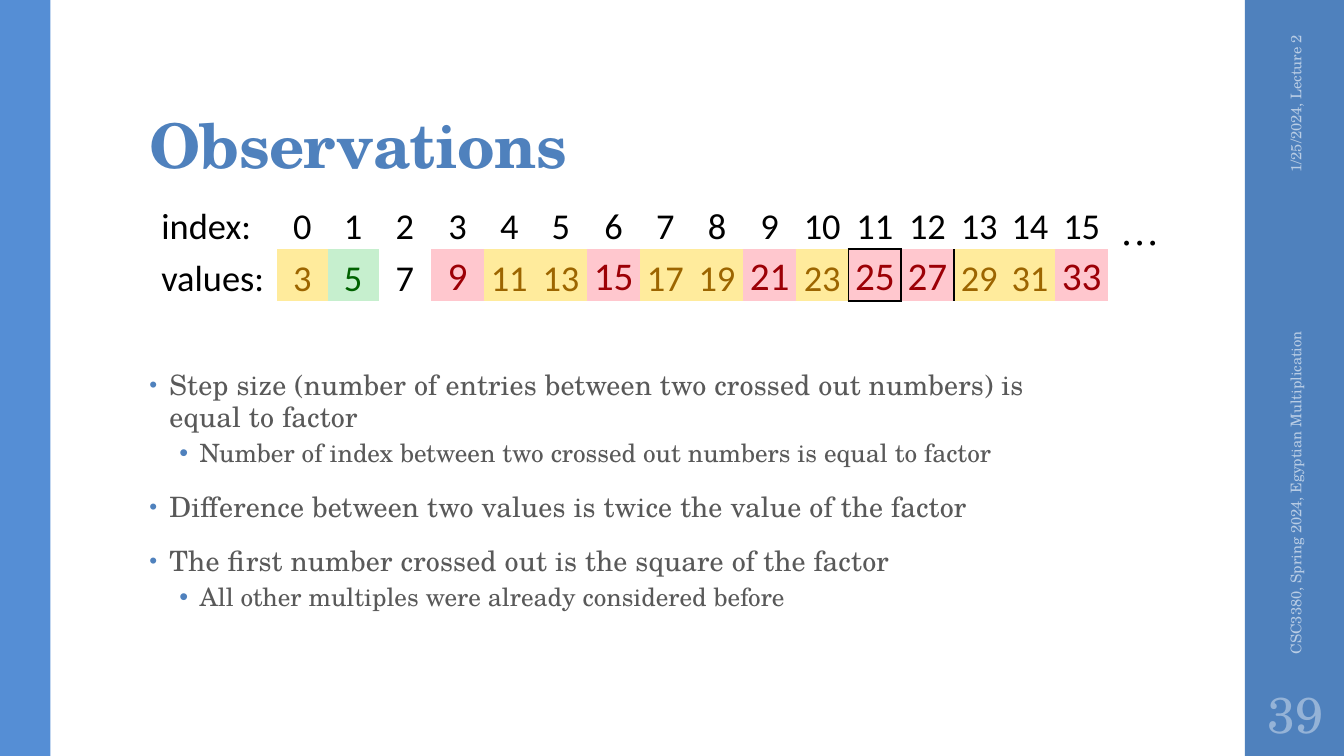
from lxml import etree
from pptx import Presentation
from pptx.dml.color import RGBColor
from pptx.enum import shapes, text
from pptx.oxml import ns
from pptx.util import Pt

BLUE = RGBColor(0x4F, 0x81, 0xBD)
LIGHT_BLUE = RGBColor(0x55, 0x8E, 0xD5)
PALE_BLUE = RGBColor(0xB9, 0xCD, 0xE5)
NUMBER_BLUE = RGBColor(0x95, 0xB3, 0xD7)
GREY = RGBColor(0x59, 0x59, 0x59)
BLACK = RGBColor(0, 0, 0)
# Cell states: fill, text colour, text size
PLAIN = (None, BLACK, 26)
PRIME = (RGBColor(0xFF, 0xEB, 0x9C), RGBColor(0x9C, 0x65, 0x00), 26)
FACTOR = (RGBColor(0xC6, 0xEF, 0xCE), RGBColor(0x00, 0x61, 0x00), 26)
CROSSED = (RGBColor(0xFF, 0xC7, 0xCE), RGBColor(0x9C, 0x00, 0x06), 28)

SERIF, SANS = "TeX Gyre Schola", "Calibri"
LEFT, CENTER, RIGHT = text.PP_ALIGN.LEFT, text.PP_ALIGN.CENTER, text.PP_ALIGN.RIGHT
WIDTH, HEIGHT = 960, 540
SIDEBAR = (889.2, 0, 72, HEIGHT)
NARROW_COLUMNS = {0, 1, 4, 7, 13, 14}
BULLETS = [
    (0, "Step size (number of entries between two crossed out numbers) is equal to factor"),
    (1, "Number of index between two crossed out numbers is equal to factor"),
    (0, "Difference between two values is twice the value of the factor"),
    (0, "The first number crossed out is the square of the factor"),
    (1, "All other multiples were already considered before"),
]


def place(shape, box):
    shape.left, shape.top, shape.width, shape.height = map(Pt, box)


def style(para, size, color, face=SERIF, align=LEFT, bold=False, spacing=0):
    para.alignment = align
    for span in para.runs:
        font = span.font
        font.name, font.size, font.bold = face, Pt(size), bold
        font.color.rgb = color
        if spacing:
            font._element.set("spc", str(spacing))


def add_bar(page, box, color):
    bar = page.shapes.add_shape(shapes.MSO_SHAPE.RECTANGLE, *map(Pt, box))
    bar.shadow.inherit = False
    bar.fill.solid()
    bar.fill.fore_color.rgb = color
    bar.line.fill.background()


def add_label(page, box, words, size, color, align=LEFT, wrap=True, rotation=0):
    label = page.shapes.add_textbox(*map(Pt, box))
    label.rotation = rotation
    frame = label.text_frame
    frame.text = words
    frame.word_wrap = wrap
    frame.vertical_anchor = text.MSO_ANCHOR.MIDDLE if wrap else text.MSO_ANCHOR.TOP
    style(frame.paragraphs[0], size, color, align=align)
    return frame


def add_sidebar(page, box):
    """Right band with date, footer and slide number."""
    left, top, width, height = box
    add_bar(page, box, BLUE)
    center = left + width / 2 + 0.2
    for words, middle, length, align in (
        ("1/25/2024, Lecture 2", 92.9, 149.8, RIGHT),
        ("CSC3380, Spring 2024, Egyptian Multiplication", 333.4, 282.2, LEFT),
    ):
        add_label(page, (center - length / 2, top + middle - 14.4, length, 28.8),
                  words, 10.5, PALE_BLUE, align, rotation=270)
    number = add_label(page, (left, top + height - 54, width, 46.8),
                       "39", 36, NUMBER_BLUE, CENTER)
    number.margin_left = number.margin_right = Pt(3.6)


def fill_title(title, box):
    place(title, box)
    frame = title.text_frame
    frame.text = "Observations"
    frame.auto_size = text.MSO_AUTO_SIZE.NONE
    frame.vertical_anchor = text.MSO_ANCHOR.BOTTOM
    frame.margin_top, frame.margin_bottom = Pt(2.2), Pt(3.6)
    para = frame.paragraphs[0]
    para.line_spacing = 0.9
    style(para, 44, BLUE, bold=True, spacing=-50)


def add_bullet(para, level):
    props = para._p.get_or_add_pPr()
    props.set("marL", str(Pt(36 if level else 14.4)))
    props.set("indent", str(-Pt(14.4)))
    color = etree.SubElement(props, ns.qn("a:buClr"))
    etree.SubElement(color, ns.qn("a:srgbClr"), val=str(BLUE))
    etree.SubElement(props, ns.qn("a:buSzPct"), val="100000" if level else "80000")
    etree.SubElement(props, ns.qn("a:buFont"), typeface="Arial")
    etree.SubElement(props, ns.qn("a:buChar"), char="•")


def fill_body(body, box):
    place(body, box)
    frame = body.text_frame
    frame.auto_size = text.MSO_AUTO_SIZE.NONE
    frame.vertical_anchor = text.MSO_ANCHOR.TOP
    frame.margin_top = Pt(120)  # keeps the list below the table
    frame.text = "\n".join(words for _, words in BULLETS)
    for row, (para, (level, _)) in enumerate(zip(frame.paragraphs, BULLETS)):
        para.level = level
        para.line_spacing = 0.9 if level else 0.95
        para.space_before = Pt(3 if level else 14 if row else 0)
        para.space_after = Pt(3 if level else 2)
        style(para, 18 if level else 20, GREY, spacing=0 if level else 10)
        add_bullet(para, level)


def value_state(value):
    if any(value > factor and value % factor == 0 for factor in (3, 5)):
        return CROSSED
    return {5: FACTOR, 7: PLAIN}.get(value, PRIME)


def fill_cell(cell, words, state, align):
    fill, color, size = state
    cell.text = words
    cell.vertical_anchor = text.MSO_ANCHOR.BOTTOM
    cell.margin_left = cell.margin_right = cell.margin_top = Pt(0.75)
    cell.margin_bottom = 0
    style(cell.text_frame.paragraphs[0], size, color, SANS, align)
    if fill is None:
        cell.fill.background()
    else:
        cell.fill.solid()
        cell.fill.fore_color.rgb = fill


def add_borders(cell, sides):
    props = cell._tc.get_or_add_tcPr()
    for order, side in enumerate(sides):
        line = etree.Element(ns.qn("a:ln" + side), w=str(Pt(1.5)))
        solid = etree.SubElement(line, ns.qn("a:solidFill"))
        etree.SubElement(solid, ns.qn("a:srgbClr"), val=str(BLACK))
        props.insert(order, line)


def add_sieve_table(page, box):
    """Index row above the row of odd values, starting at 3."""
    table = page.shapes.add_table(2, 17, *map(Pt, box)).table
    table.first_row = table.horz_banding = False
    # No style, no grid
    table._tbl.tblPr.find(ns.qn("a:tableStyleId")).text = "{2D5ABB26-0587-4C30-8999-92F81FD0307C}"
    table.rows[0].height, table.rows[1].height = Pt(34), Pt(37)
    table.columns[0].width = Pt(83.4)
    for row, words in enumerate(("index:", "values:")):
        fill_cell(table.cell(row, 0), words, PLAIN, LEFT)
    for index in range(16):
        value = 2 * index + 3
        column = index + 1
        table.columns[column].width = Pt(36.3 if index in NARROW_COLUMNS else 37.6)
        fill_cell(table.cell(0, column), str(index), PLAIN, CENTER)
        fill_cell(table.cell(1, column), str(value), value_state(value), CENTER)
    # Frame around the square 25, shared with its neighbours
    for row, column, sides in ((1, 12, "LRTB"), (0, 12, "B"), (1, 11, "R"), (1, 13, "L")):
        add_borders(table.cell(row, column), sides)


def build_slide(deck):
    page = deck.slides.add_slide(deck.slide_layouts[1])
    add_bar(page, (0, 0, 36, HEIGHT), LIGHT_BLUE)
    add_sidebar(page, SIDEBAR)
    fill_title(page.shapes.title, (99.4, 23, 763.2, 110.2))
    fill_body(page.placeholders[1], (99.4, 144, 676.8, 342.7))
    add_label(page, (793.4, 144, 42.5, 41), "…", 28, BLACK, wrap=False)
    add_sieve_table(page, (114.5, 144, 676.8, 71))


def main():
    deck = Presentation()
    deck.slide_width, deck.slide_height = Pt(WIDTH), Pt(HEIGHT)
    build_slide(deck)
    deck.save("out.pptx")


if __name__ == "__main__":
    main()
